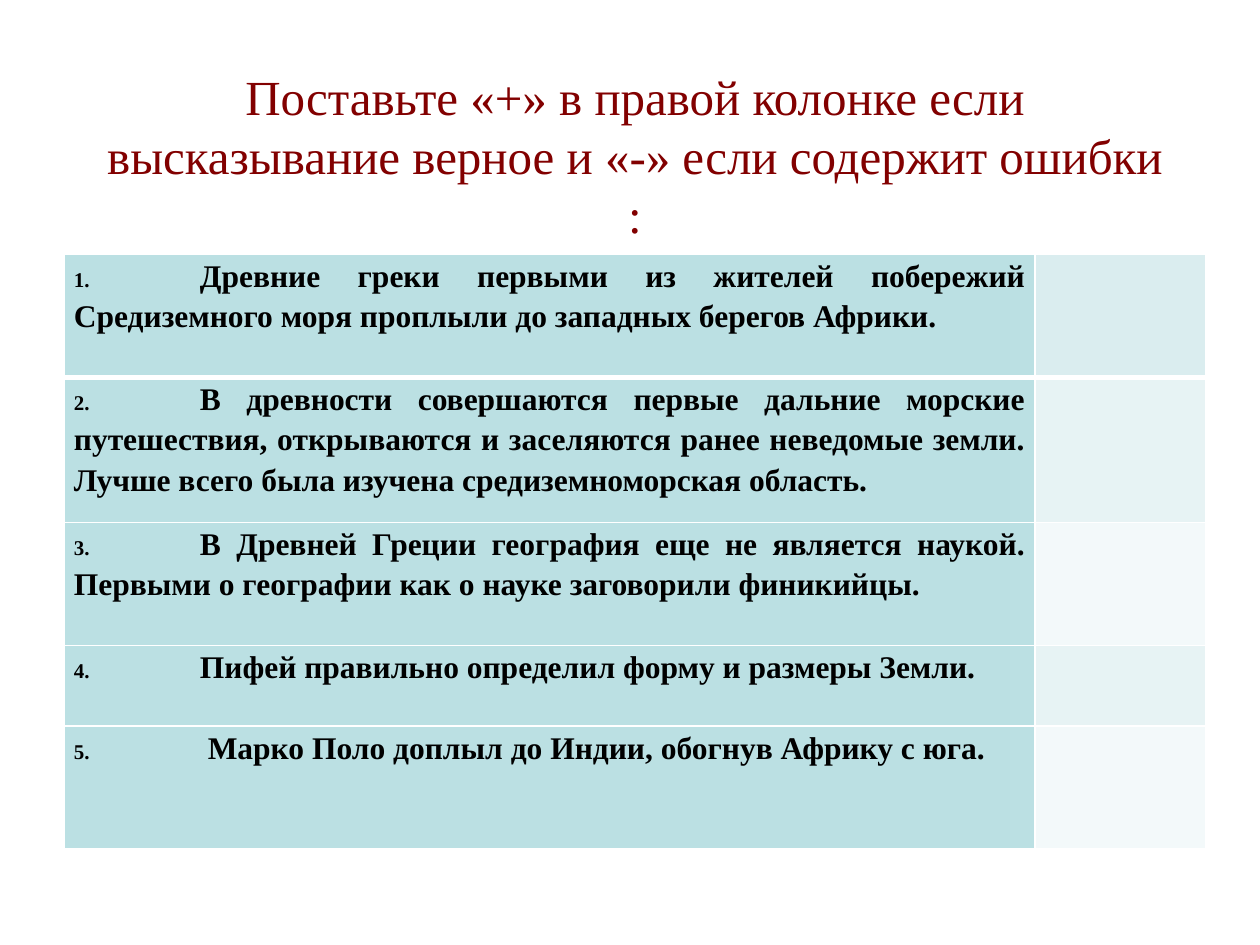
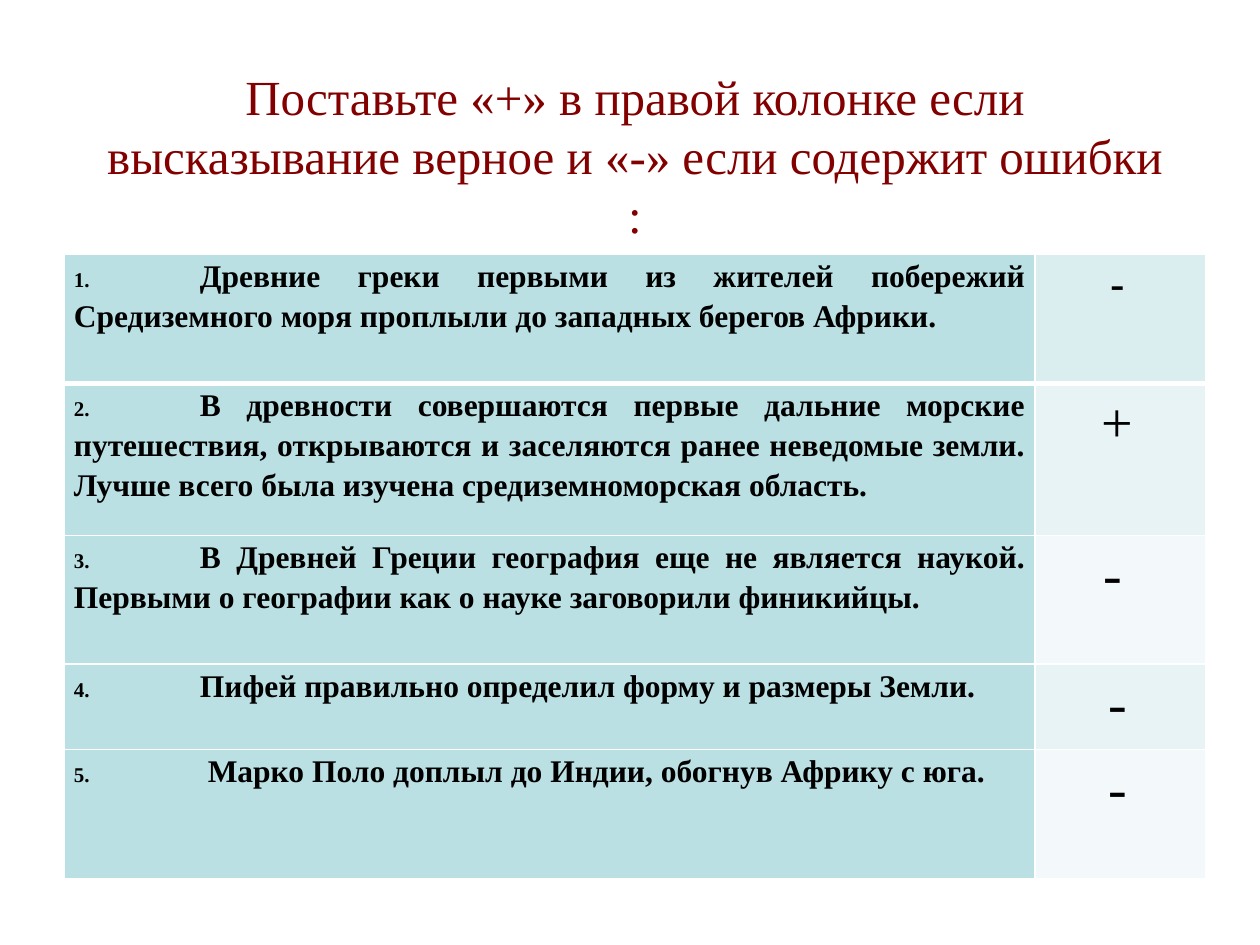
from lxml.etree import SubElement
from pptx import Presentation
from pptx.dml.color import RGBColor
from pptx.enum.text import MSO_ANCHOR, MSO_AUTO_SIZE, PP_ALIGN
from pptx.oxml.ns import qn
from pptx.util import Cm, Pt

TITLE = "Поставьте «+» в правой колонке если высказывание верное и «-» если содержит ошибки :"
CLAIMS = [
    "Древние греки первыми из жителей побережий Средиземного моря проплыли до западных берегов Африки.",
    "В древности совершаются первые дальние морские путешествия, открываются и заселяются ранее неведомые земли. Лучше всего была изучена средиземноморская область.",
    "В Древней Греции география еще не является наукой. Первыми о географии как о науке заговорили финикийцы.",
    "Пифей правильно определил форму и размеры Земли.",
    " Марко Поло доплыл до Индии, обогнув Африку с юга.",
]
# Runs of each answer: text, size, bold
MARKS = [
    [("-", 24, True), (" ", 12, True)],
    [("+", 32, False), (" ", 12, False)],
    [("- ", 32, False)],
    [("-", 32, False), (" ", 12, False)],
    [("-", 32, False), (" ", 12, False)],
]
SLIDES = [
    {"rows": [2.48, 2.92, 2.48, 1.63, 2.47], "marks": [[]] * len(CLAIMS)},
    {"rows": [2.6, 3.06, 2.6, 1.72, 2.6], "marks": MARKS},
]
COLS = [19.56, 3.44]
TAB = 2.54
FONT = "Times New Roman"
COLORS = {
    "title": "820000", "text": "000000", "line": "FFFFFF",
    "claim": "BBE0E3", "head": "DAEDEF", "odd": "E7F3F4", "even": "F3F9FA",
}


def write(frame, runs, color="text", align=PP_ALIGN.CENTER, space=None, tab=None):
    """Fill the first paragraph with runs of (text, size, bold)."""
    par = frame.paragraphs[0]
    par.alignment = align
    if space:
        par.line_spacing = space
    if tab:
        stops = SubElement(par._p.get_or_add_pPr(), qn("a:tabLst"))
        SubElement(stops, qn("a:tab"), pos=str(Cm(tab)), algn="l")
    for text, size, bold in runs:
        run = par.add_run()
        run.text = text
        run.font.name = FONT
        run.font.size = Pt(size)
        run.font.bold = bold
        run.font.color.rgb = RGBColor.from_string(COLORS[color])


def edge(cell, top, bottom):
    """Draw the four borders; top and bottom are widths in points."""
    props = cell._tc.get_or_add_tcPr()
    for side, width in (("L", 1), ("R", 1), ("T", top), ("B", bottom)):
        line = SubElement(props, qn(f"a:ln{side}"), w=str(Pt(width)))
        fill = SubElement(line, qn("a:solidFill"))
        SubElement(fill, qn("a:srgbClr"), val=COLORS["line"])


def style(cell, row, color):
    edge(cell, 3 if row == 1 else 1, 3 if row == 0 else 1)
    cell.fill.solid()
    cell.fill.fore_color.rgb = RGBColor.from_string(COLORS[color])
    cell.margin_left = cell.margin_right = Cm(0.19)
    cell.margin_top = cell.margin_bottom = 0


def add_title(slide):
    box = slide.shapes.add_textbox(Cm(1.9), Cm(1.54), Cm(21.8), Cm(3.18))
    frame = box.text_frame
    frame.word_wrap = True
    frame.auto_size = MSO_AUTO_SIZE.NONE
    frame.vertical_anchor = MSO_ANCHOR.MIDDLE
    write(frame, [(TITLE, 28, False)], color="title")


def add_quiz(slide, rows, marks):
    table = slide.shapes.add_table(
        len(rows), len(COLS), Cm(1.3), Cm(5.13), Cm(sum(COLS)), Cm(sum(rows))
    ).table
    table.first_row = table.horz_banding = False
    for col, width in zip(table.columns, COLS):
        col.width = Cm(width)
    for i, (height, claim, mark) in enumerate(zip(rows, CLAIMS, marks)):
        table.rows[i].height = Cm(height)
        left, right = table.cell(i, 0), table.cell(i, 1)
        style(left, i, "claim")
        style(right, i, "head" if i == 0 else "odd" if i % 2 else "even")
        write(left.text_frame, [(f"{i + 1}.\t", 12, True), (claim, 18, True)],
              align=PP_ALIGN.JUSTIFY, space=1.15, tab=TAB)
        write(right.text_frame, mark, space=1.15)


def main():
    deck = Presentation()
    deck.slide_width, deck.slide_height = Cm(25.4), Cm(19.05)
    for quiz in SLIDES:
        slide = deck.slides.add_slide(deck.slide_layouts[6])
        add_title(slide)
        add_quiz(slide, **quiz)
    deck.save("out.pptx")


if __name__ == "__main__":
    main()
